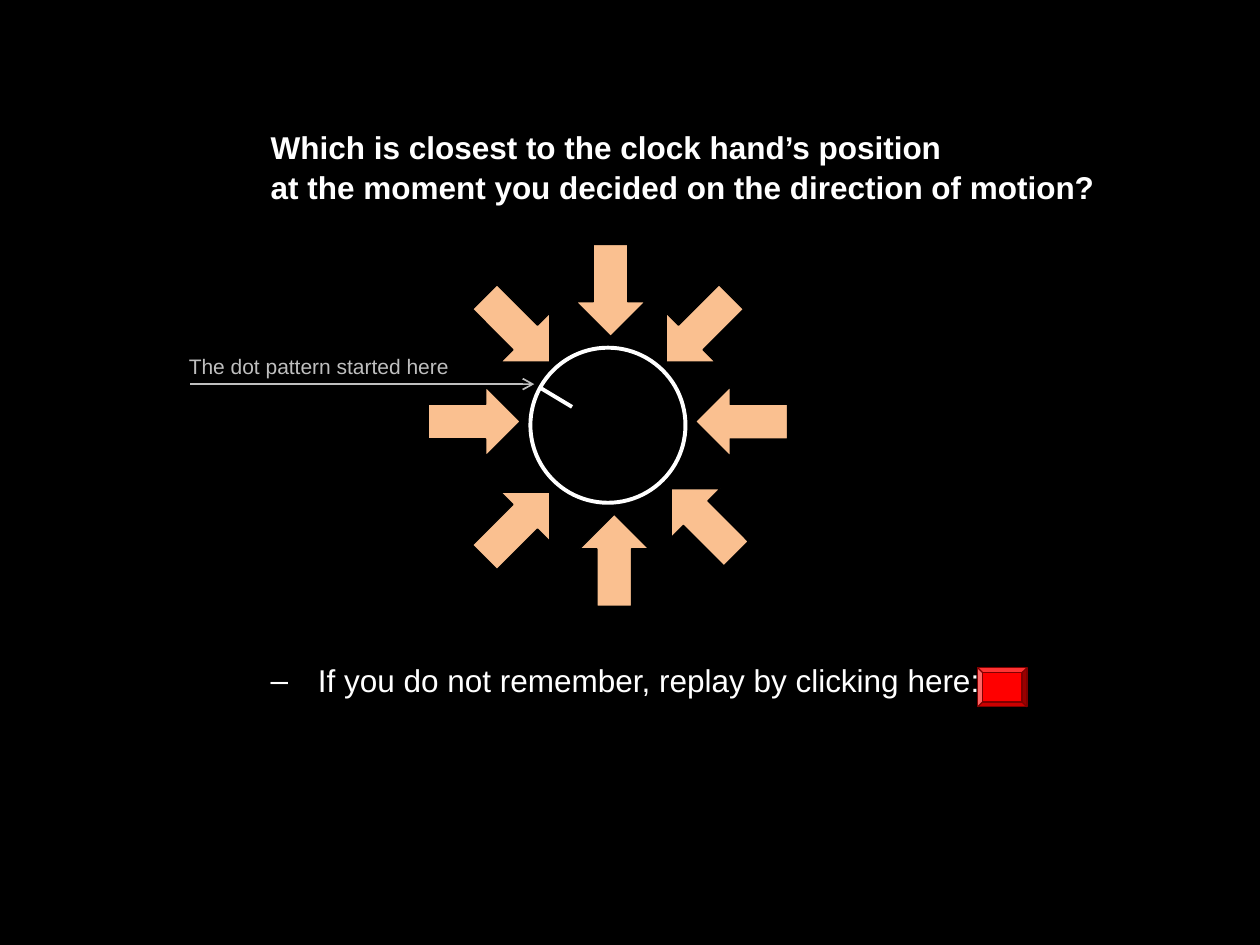
import pptx
import pptx.util
import pptx.dml.color
import pptx.enum.shapes
import pptx.enum.text
import pptx.oxml.ns
from lxml import etree

Pt = pptx.util.Pt
RGBColor = pptx.dml.color.RGBColor
SHAPE = pptx.enum.shapes.MSO_SHAPE
ANCHOR = pptx.enum.text.MSO_ANCHOR
qn = pptx.oxml.ns.qn

BLACK = RGBColor(0x00, 0x00, 0x00)
WHITE = RGBColor(0xFF, 0xFF, 0xFF)
GREY = RGBColor(0xBF, 0xBF, 0xBF)
PEACH = RGBColor(0xFA, 0xC0, 0x90)
RED = RGBColor(0xFF, 0x00, 0x00)
DARK_RED = RGBColor(0x80, 0x00, 0x00)

ARROW_WIDTH, ARROW_HEIGHT = 52.56, 39.6
ARROW_PLACES = {
    0: (0, 74.9),
    180: (152.6, 74.9),
    270: (79.9, 154.1),
    225: (131, 131.8),
    315: (24.5, 133.9),
    135: (128.2, 22.3),
    90: (77.8, 0),
    45: (24.5, 22.3),
}


def add_figure(shapes, preset, box, fill, line, weight):
    """Add a flat preset shape; a fill of None leaves it hollow."""
    figure = shapes.add_shape(preset, *map(Pt, box))
    figure.shadow.inherit = False
    if fill is None:
        figure.fill.background()
    else:
        figure.fill.solid()
        figure.fill.fore_color.rgb = fill
    figure.line.color.rgb = line
    figure.line.width = Pt(weight)
    return figure


def add_line(shapes, start, end, color, weight):
    """Add a straight line without a shadow."""
    line = shapes.add_connector(
        pptx.enum.shapes.MSO_CONNECTOR.STRAIGHT, *map(Pt, (*start, *end)))
    line.line.color.rgb = color
    line.line.width = Pt(weight)
    etree.SubElement(line._element.spPr, qn("a:effectLst"))
    return line


def add_text(shapes, box, lines, size, color, bold=False, anchor=ANCHOR.TOP):
    """Add a one-paragraph text box, its lines parted by line breaks."""
    frame = shapes.add_textbox(*map(Pt, box)).text_frame
    frame.word_wrap = True
    frame.vertical_anchor = anchor
    paragraph = frame.paragraphs[0]
    for index, line in enumerate(lines):
        if index:
            paragraph.add_line_break()
        run = paragraph.add_run()
        run.text = line
        run.font.name = "Arial"
        run.font.size = Pt(size)
        run.font.bold = bold
        run.font.color.rgb = color
    return paragraph


def add_clock(slide, left, top):
    """Add the clock face and its hand."""
    clock = slide.shapes.add_group_shape().shapes
    add_figure(clock, SHAPE.OVAL, (left, top, 88.6, 88.6), None, WHITE, 2.25)
    add_line(clock, (left + 23.8, top + 33.8), (left + 5.8, top + 23),
             WHITE, 2.25)


def add_start_note(slide, left, top):
    """Add the note on the starting point with its pointer."""
    note = slide.shapes.add_group_shape().shapes
    pointer = add_line(note, (left + 8, top + 20.8),
                       (left + 204.5, top + 20.8), GREY, 1)
    etree.SubElement(pointer.line._get_or_add_ln(), qn("a:tailEnd"),
                     type="arrow")
    add_text(note, (left, top, 182.9, 21.8),
             ["The dot pattern started here"], 12, GREY)


def add_answer_arrows(slide, left, top):
    """Add the eight arrows that point at the clock."""
    for rotation, (across, down) in ARROW_PLACES.items():
        box = (left + across, top + down, ARROW_WIDTH, ARROW_HEIGHT)
        arrow = add_figure(slide.shapes, SHAPE.RIGHT_ARROW, box,
                           PEACH, BLACK, 0.75)
        arrow.rotation = rotation


def add_question(slide, left, top):
    """Add the question above the clock."""
    question = add_text(
        slide.shapes, (left, top, 572.4, 77.8),
        ["Which is closest to the clock hand’s position",
         "at the moment you decided on the direction of motion?"],
        18, WHITE, bold=True, anchor=ANCHOR.BOTTOM)
    question.line_spacing = 1.05


def add_replay_hint(slide, left, top):
    """Add the dashed line of text on replaying."""
    hint = add_text(slide.shapes, (left, top, 424.8, 114.5),
                    ["If you do not remember, replay by clicking here:"],
                    18, WHITE)
    properties = hint._p.get_or_add_pPr()
    properties.set("marL", str(Pt(27)))
    properties.set("indent", str(Pt(-27)))
    etree.SubElement(properties, qn("a:buFont"), typeface="Arial")
    etree.SubElement(properties, qn("a:buChar"), char="–")


def main():
    """Build the slide and save it."""
    deck = pptx.Presentation()
    deck.slide_width, deck.slide_height = Pt(720), Pt(540)
    slide = deck.slides.add_slide(deck.slide_layouts[6])
    slide.background.fill.solid()
    slide.background.fill.fore_color.rgb = BLACK
    add_figure(slide.shapes, SHAPE.BEVEL, (558.7, 381.6, 28.1, 22.3),
               RED, DARK_RED, 0.75)
    add_clock(slide, 303.1, 198.7)
    add_start_note(slide, 100.8, 198.7)
    add_answer_arrows(slide, 244.8, 146.2)
    add_question(slide, 147.6, 43.2)
    add_replay_hint(slide, 147.6, 374.4)
    deck.save("out.pptx")


if __name__ == "__main__":
    main()
